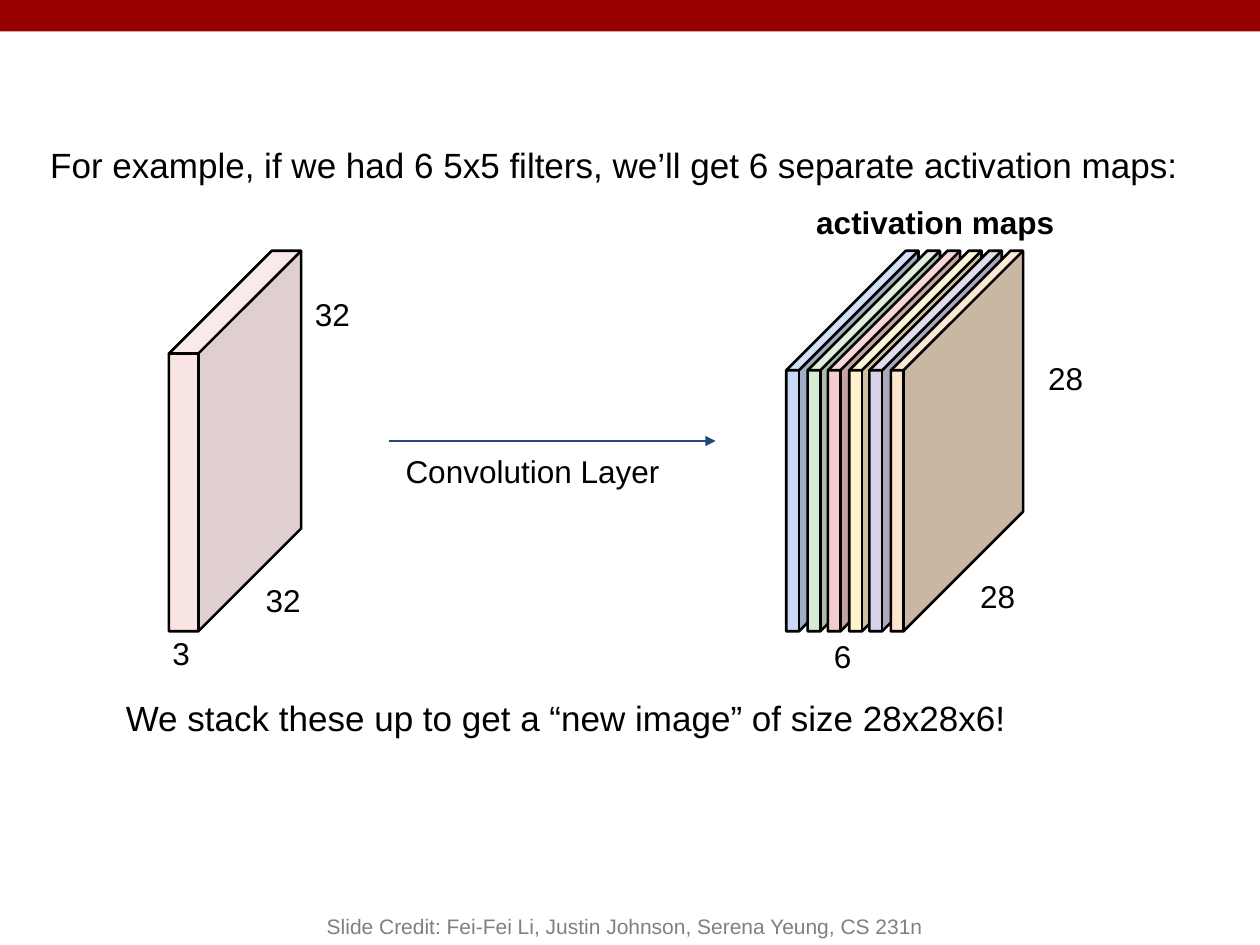
from lxml import etree
from pptx import Presentation
from pptx import util as u
from pptx.dml.color import RGBColor
from pptx.enum import shapes, text
from pptx.oxml.ns import qn

PX = 9144  # EMU per px, 100 px to the inch
COLORS = {
    "banner": "990000", "ink": "000000", "arrow": "1F497D", "credit": "808080",
    "input": "F4CCCC", "blue": "C9DAF8", "green": "D9EAD3", "red": "F4CCCC",
    "yellow": "FFF2CC", "purple": "D9D2E9", "orange": "FCE5CD",
}
MAPS = ["blue", "green", "red", "yellow", "purple", "orange"]
CUBE_WIDTH = 105


def px(*lengths):
    return [u.Emu(round(length * PX)) for length in lengths]


def color(name):
    return RGBColor.from_string(COLORS[name])


def add_text(slide, box, words, size=18, bold=False, ink="ink", inset=10,
             align=text.PP_ALIGN.LEFT, anchor=text.MSO_ANCHOR.TOP):
    frame = slide.shapes.add_textbox(*px(*box)).text_frame
    frame.word_wrap = True
    frame.vertical_anchor = anchor
    frame.margin_left = frame.margin_right = px(10)[0]
    frame.margin_top = frame.margin_bottom = px(inset)[0]
    paragraph = frame.paragraphs[0]
    paragraph.text = words
    paragraph.alignment = align
    font = paragraph.font
    font.name, font.size, font.bold = "Arial", u.Pt(size), bold
    font.color.rgb = color(ink)


def add_filled(slide, kind, box, fill):
    shape = slide.shapes.add_shape(kind, *px(*box))
    shape.shadow.inherit = False
    shape.fill.solid()
    shape.fill.fore_color.rgb = color(fill)
    return shape


def add_cube(slide, box, fill, depth):
    shape = add_filled(slide, shapes.MSO_SHAPE.CUBE, box, fill)
    shape.adjustments[0] = depth
    shape.line.color.rgb = color("ink")
    shape.line.width = u.Pt(1.5)
    return shape


def add_banner(slide, box):
    add_filled(slide, shapes.MSO_SHAPE.RECTANGLE, box, "banner").line.fill.background()


def add_input_volume(slide, box):
    left, top, width, height = box
    shape = add_cube(slide, box, "input", 0.777)
    # Translucent fill
    fill = shape._element.spPr.find(qn("a:solidFill"))
    etree.SubElement(fill[0], qn("a:alpha"), val="52000")
    # Dimensions: depth, height, channels
    add_text(slide, (left + 67, top + 252, 54, 34), "32")
    add_text(slide, (left + 106, top + 25, 54, 31), "32")
    add_text(slide, (left - 7, top + 294, 54, 20), "3")


def add_layer_arrow(slide, box):
    left, top, width, height = box
    arrow = slide.shapes.add_connector(
        shapes.MSO_CONNECTOR.STRAIGHT, *px(left, top, left + width, top))
    arrow.line.color.rgb = color("arrow")
    arrow.line.width = u.Pt(0.75)
    etree.SubElement(arrow.line._get_or_add_ln(), qn("a:tailEnd"), type="triangle")
    etree.SubElement(arrow._element.spPr, qn("a:effectLst"))
    add_text(slide, (left + 3, top - 1, 358, height), "Convolution Layer")


def add_activation_maps(slide, box):
    left, top, width, height = box
    # Evenly spaced maps, back to front
    pitch = (width - CUBE_WIDTH) / (len(MAPS) - 1)
    for index, fill in enumerate(MAPS):
        add_cube(slide, (left + round(index * pitch), top, CUBE_WIDTH, height), fill, 0.904)
    add_text(slide, (left + 14, top - 48, 226, 59), "activation maps", bold=True)
    # Dimensions: channels, depth, height
    add_text(slide, (left + 28, top + 297, 36, 34), "6")
    add_text(slide, (left + 144, top + 249, 54, 34), "28")
    add_text(slide, (left + 198, top + 76, 54, 34), "28")


def add_credit(slide, box):
    add_text(slide, box, "Slide Credit: Fei-Fei Li, Justin Johnson, Serena Yeung, CS 231n",
             size=12, ink="credit", inset=5,
             align=text.PP_ALIGN.CENTER, anchor=text.MSO_ANCHOR.BOTTOM)


def main():
    presentation = Presentation()
    presentation.slide_width, presentation.slide_height = px(1000, 750)
    slide = presentation.slides.add_slide(presentation.slide_layouts[6])
    add_banner(slide, (0, 0, 1000, 25))
    add_text(slide, (30, 104, 954, 42),
             "For example, if we had 6 5x5 filters, we’ll get 6 separate activation maps:", size=20)
    add_input_volume(slide, (134, 199, CUBE_WIDTH, 302))
    add_layer_arrow(slide, (309, 350, 259, 89))
    add_activation_maps(slide, (624, 199, 188, 302))
    add_text(slide, (90, 543, 900, 31),
             "We stack these up to get a “new image” of size 28x28x6!", size=20)
    add_credit(slide, (200, 700, 592, 50))
    presentation.save("out.pptx")


if __name__ == "__main__":
    main()
